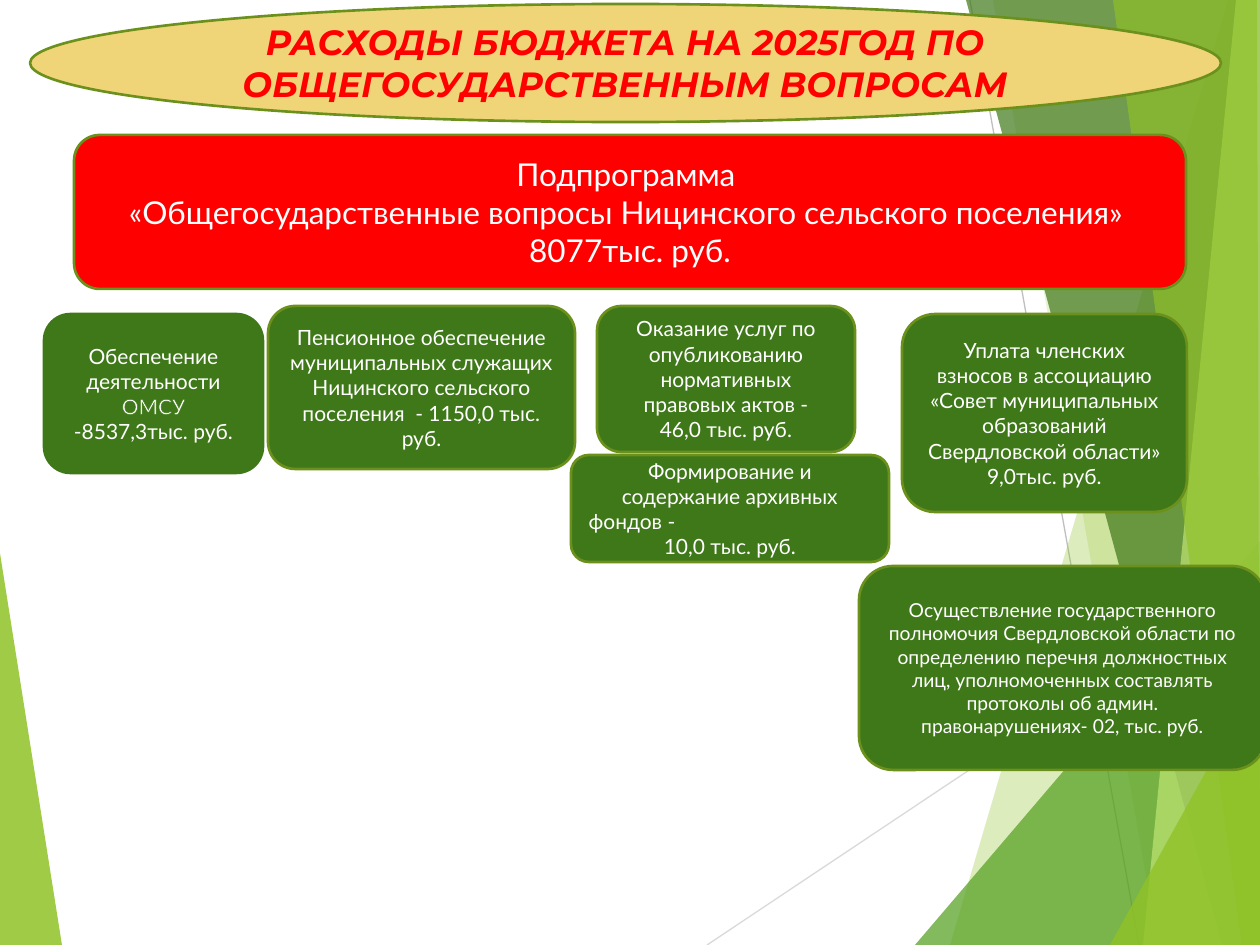
import lxml.etree
import pptx
import pptx.dml.color
import pptx.enum.shapes
import pptx.enum.text
import pptx.oxml.ns
import pptx.util

RGB = pptx.dml.color.RGBColor
SHAPE = pptx.enum.shapes.MSO_SHAPE
ALIGN = pptx.enum.text.PP_ALIGN
qn = pptx.oxml.ns.qn

PX = 914400 / 126  # EMU per px
WIDTH, HEIGHT = 1260, 945

WHITE = RGB(0xFF, 0xFF, 0xFF)
RED = RGB(0xFF, 0x00, 0x00)
SAND = RGB(0xF0, 0xD5, 0x78)
OLIVE = RGB(0x6B, 0x90, 0x1C)
DARK_GREEN = RGB(0x3F, 0x78, 0x19)
GREEN = RGB(0x54, 0xA0, 0x21)
LIME = RGB(0x90, 0xC2, 0x26)
PALE_LIME = RGB(0xC0, 0xE4, 0x74)
LIGHT_GREY = RGB(0xD9, 0xD9, 0xD9)
GREY = RGB(0xBF, 0xBF, 0xBF)

# Background: colour, opacity in percent, corner points
LEFT_FACET = (LIME, 85, [(0, 553), (62, 945), (0, 945)])
RIGHT_FACETS = [
    (LIME, 30, [(1228, 0), (950, 945), (1260, 945), (1260, 0)]),
    (LIME, 20, [(993, 0), (1158, 945), (1260, 945), (1260, 0)]),
    (GREEN, 72, [(915, 945), (1260, 541), (1260, 945)]),
    (DARK_GREEN, 70, [(966, 0), (1222, 945), (1260, 945), (1260, 0)]),
    (PALE_LIME, 70, [(1236, 0), (1143, 945), (1260, 945), (1260, 0)]),
    (LIME, 65, [(1113, 0), (1242, 945), (1260, 945), (1257, 0)]),
    (LIME, 80, [(1110, 945), (1260, 674), (1260, 945)]),
]
THIN_LINES = [
    (LIGHT_GREY, (707, 945), (1260, 576)),
    (GREY, (970, 0), (1139, 945)),
]

# Cards: place, text size, paragraphs
CARDS = [
    ((268, 306, 307, 163), 12, [
        "Пенсионное обеспечение муниципальных служащих Ницинского сельского "
        "поселения  - 1150,0 тыс. руб."]),
    ((597, 306, 258, 146), 12, [
        "Оказание услуг по опубликованию нормативных правовых актов -",
        "46,0 тыс. руб."]),
    ((902, 314, 285, 198), 12, [
        "Уплата членских взносов в ассоциацию «Совет муниципальных "
        "образований Свердловской области» 9,0тыс. руб."]),
    ((859, 566, 407, 204), 11, [
        "Осуществление государственного полномочия Свердловской области по "
        "определению перечня должностных лиц, уполномоченных составлять "
        "протоколы об админ. правонарушениях- 02, тыс. руб."]),
]


def px(value):
    return pptx.util.Emu(round(value * PX))


def add_facet(page, color, opacity, points):
    """Draw a translucent polygon."""
    builder = page.shapes.build_freeform(*points[0], scale=PX)
    builder.add_line_segments(points[1:], close=True)
    facet = builder.convert_to_shape()
    facet.shadow.inherit = False
    facet.line.fill.background()
    facet.fill.solid()
    facet.fill.fore_color.rgb = color
    srgb = facet.element.spPr.find(".//" + qn("a:srgbClr"))
    lxml.etree.SubElement(srgb, qn("a:alpha"), val=str(opacity * 1000))


def add_thin_line(page, color, start, end):
    line = page.shapes.add_connector(
        pptx.enum.shapes.MSO_CONNECTOR.STRAIGHT, *map(px, start + end))
    line.line.color.rgb = color
    line.line.width = pptx.util.Pt(0.75)
    lxml.etree.SubElement(line.element.spPr, qn("a:effectLst"))


def add_box(page, kind, place, fill, border=OLIVE):
    box = page.shapes.add_shape(kind, *map(px, place))
    box.shadow.inherit = False
    box.fill.solid()
    box.fill.fore_color.rgb = fill
    box.line.color.rgb = border
    box.line.width = pptx.util.Pt(1.5)
    frame = box.text_frame
    frame.word_wrap = True
    frame.vertical_anchor = pptx.enum.text.MSO_ANCHOR.MIDDLE
    return box


def add_span(para, text, size, color=WHITE, font="Lato"):
    span = para.add_run()
    span.text = text
    span.font.size = pptx.util.Pt(size)
    span.font.name = font
    span.font.color.rgb = color
    return span


def write_paragraphs(box, texts, size):
    """Write centred paragraphs and return them."""
    frame = box.text_frame
    for index, text in enumerate(texts):
        para = frame.add_paragraph() if index else frame.paragraphs[0]
        para.alignment = ALIGN.CENTER
        add_span(para, text, size)
    return frame.paragraphs


def outline_span(span, color):
    """Put a thin outline around the letters."""
    outline = lxml.etree.Element(qn("a:ln"), w=str(pptx.util.Pt(0.75)))
    fill = lxml.etree.SubElement(outline, qn("a:solidFill"))
    lxml.etree.SubElement(fill, qn("a:srgbClr"), val=str(color))
    span.font.fill  # the outline goes before the letter fill
    span.font._element.insert(0, outline)


def add_title(page):
    oval = add_box(page, SHAPE.OVAL, (30, 4, 1191, 118), SAND)
    title = page.shapes.title
    title.left, title.top, title.width, title.height = map(
        px, (204, 21, 842, 84))
    oval.element.addnext(title.element)
    frame = title.text_frame
    frame.word_wrap = True
    frame.auto_size = pptx.enum.text.MSO_AUTO_SIZE.NONE
    frame.vertical_anchor = pptx.enum.text.MSO_ANCHOR.MIDDLE
    para = frame.paragraphs[0]
    para.alignment = ALIGN.CENTER
    span = add_span(
        para, "РАСХОДЫ БЮДЖЕТА НА 2025ГОД ПО ОБЩЕГОСУДАРСТВЕННЫМ ВОПРОСАМ",
        20, RED, "Montserrat")
    span.font.bold = True
    span.font.italic = True


def main():
    deck = pptx.Presentation()
    deck.slide_width, deck.slide_height = px(WIDTH), px(HEIGHT)
    page = deck.slides.add_slide(deck.slide_layouts[5])

    # Background facets
    add_facet(page, *LEFT_FACET)
    for line in THIN_LINES:
        add_thin_line(page, *line)
    for facet in RIGHT_FACETS:
        add_facet(page, *facet)

    # Title and subprogramme
    add_title(page)
    subprogramme = add_box(
        page, SHAPE.ROUNDED_RECTANGLE, (74, 135, 1112, 154), RED)
    write_paragraphs(subprogramme, [
        "Подпрограмма ",
        "«Общегосударственные вопросы Ницинского сельского поселения» ",
        "8077тыс. руб."], 18)

    # Administration card, with an outlined abbreviation
    office = add_box(page, SHAPE.ROUNDED_RECTANGLE, (44, 314, 219, 159),
                     DARK_GREEN, DARK_GREEN)
    para = write_paragraphs(office, ["Обеспечение деятельности "], 12)[0]
    outline_span(add_span(para, "ОМСУ", 12), DARK_GREEN)
    add_span(para, " -8537,3тыс. руб.", 12)

    # Other expense cards
    for place, size, texts in CARDS:
        card = add_box(page, SHAPE.ROUNDED_RECTANGLE, place, DARK_GREEN)
        write_paragraphs(card, texts, size)

    # Archive card, with its middle line at the left
    archive = add_box(
        page, SHAPE.ROUNDED_RECTANGLE, (571, 455, 318, 107), DARK_GREEN)
    lines = write_paragraphs(archive, [
        "Формирование и содержание архивных", "фондов -", "10,0 тыс. руб."], 12)
    lines[1].alignment = ALIGN.LEFT

    deck.save("out.pptx")


if __name__ == "__main__":
    main()
